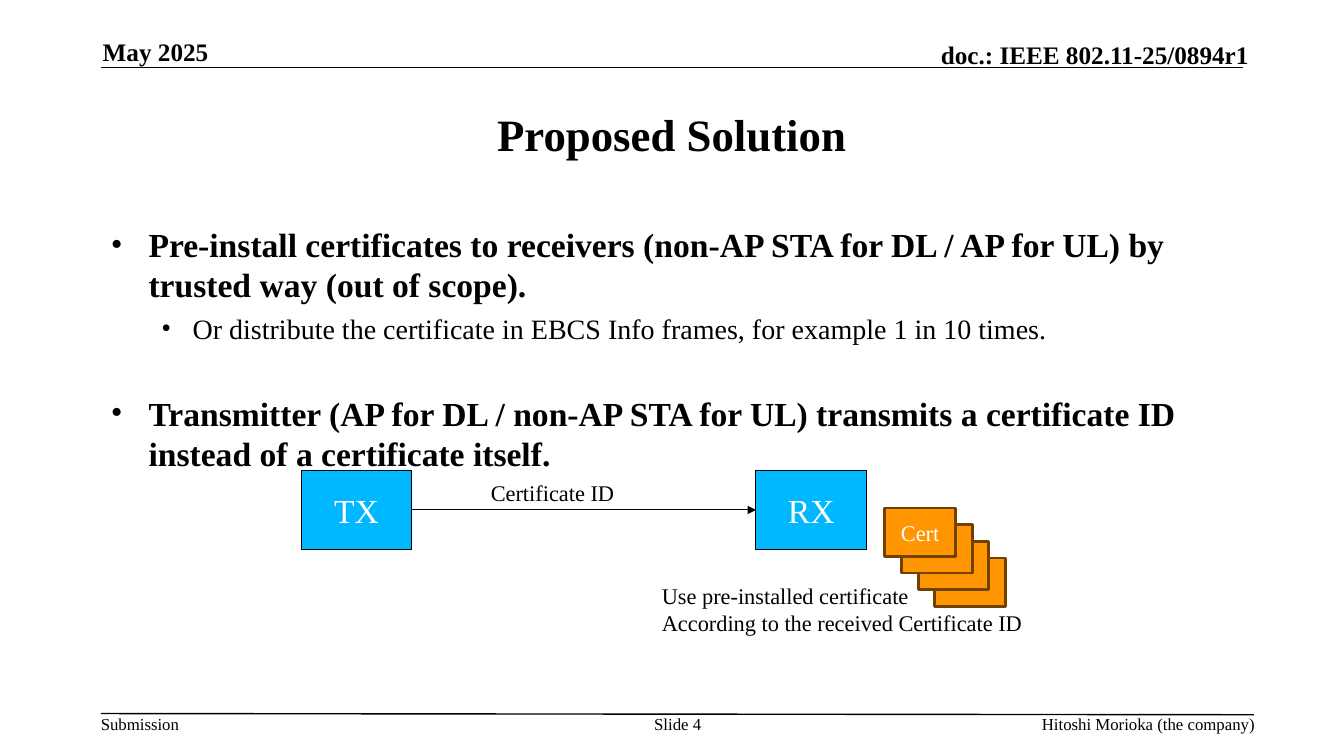
import pptx
import pptx.util
import pptx.dml.color
import pptx.enum.shapes
import pptx.enum.text
import pptx.oxml
import pptx.oxml.ns

Cm, Pt = pptx.util.Cm, pptx.util.Pt
ALIGN = pptx.enum.text.PP_ALIGN
ANCHOR = pptx.enum.text.MSO_ANCHOR
AUTO = pptx.enum.text.MSO_AUTO_SIZE
RECT = pptx.enum.shapes.MSO_SHAPE.RECTANGLE
STRAIGHT = pptx.enum.shapes.MSO_CONNECTOR.STRAIGHT

TITLE = "Proposed Solution"
BULLETS = [
    (0, "Pre-install certificates to receivers (non-AP STA for DL / AP for UL) by trusted way (out of scope).", 0),
    (1, "Or distribute the certificate in EBCS Info frames, for example 1 in 10 times.", 5),
    (0, "Transmitter (AP for DL / non-AP STA for UL) transmits a certificate ID instead of a certificate itself.", 34),
]
LEVELS = [
    {"size": 24, "bold": True, "left": 0.95, "hang": 0.95},
    {"size": 20, "bold": False, "left": 2.06, "hang": 0.79},
]
HEADER = {"size": 18, "bold": True, "anchor": ANCHOR.BOTTOM}
FOOTER = {"size": 12}
MARGINS = [
    ("May 2025", (2.59, 0.91, 6.93, 0.76), ALIGN.LEFT, HEADER),
    ("doc.: IEEE 802.11-25/0894r1", (18.52, 0.99, 12.95, 0.76), ALIGN.RIGHT, HEADER),
    ("Submission", (2.54, 17.98, 2.6, 0.51), ALIGN.LEFT, FOOTER),
    ("Slide 4", (16.1, 17.98, 1.96, 1.02), ALIGN.CENTER, FOOTER),
    ("Hitoshi Morioka (the company)", (19.84, 17.98, 11.79, 0.51), ALIGN.RIGHT, FOOTER),
]
RULES = [(2.54, 1.7, 31.32, 1.7), (2.54, 17.98, 31.6, 18.01)]
STATIONS = [("TX", 7.59), ("RX", 19.05)]
LABELS = [
    (["Certificate ID"], (12.12, 11.94, 3.68, 0.94)),
    (["Use pre-installed certificate", "According to the received Certificate ID"], (16.43, 14.55, 9.73, 1.63)),
]
CERT_COUNT, CERT_LEFT, CERT_TOP, CERT_STEP = 4, 22.3, 12.8, 0.42


def rgb(value):
    return pptx.dml.color.RGBColor.from_string(value)


def write(p, text, size=16, bold=False, color="000000", align=ALIGN.LEFT):
    p.alignment = align
    r = p.add_run()
    r.text = text
    r.font.name = "Times New Roman"
    r.font.size = Pt(size)
    r.font.bold = bold
    r.font.color.rgb = rgb(color)


def add_xml(parent, tag, **attrs):
    el = pptx.oxml.parse_xml(f"<a:{tag} {pptx.oxml.ns.nsdecls('a')}/>")
    for key, value in attrs.items():
        el.set(key, value)
    parent.append(el)


def place(sp, box):
    sp.left, sp.top, sp.width, sp.height = map(Cm, box)


def add_box(s, box, fill, line, width):
    sp = s.shapes.add_shape(RECT, *map(Cm, box))
    sp.shadow.inherit = False
    sp.fill.solid()
    sp.fill.fore_color.rgb = rgb(fill)
    sp.line.color.rgb = rgb(line)
    sp.line.width = Pt(width)
    sp.text_frame.vertical_anchor = ANCHOR.MIDDLE
    return sp


def add_line(s, ends, width):
    c = s.shapes.add_connector(STRAIGHT, *map(Cm, ends))
    c.line.color.rgb = rgb("000000")
    c.line.width = Pt(width)
    add_xml(c._element.spPr, "effectLst")
    return c


def add_margins(s):
    for ends in RULES:
        add_line(s, ends, 1)
    for text, box, align, style in MARGINS:
        tf = s.shapes.add_textbox(*map(Cm, box)).text_frame
        tf.margin_left = tf.margin_right = tf.margin_top = tf.margin_bottom = 0
        tf.word_wrap = True
        tf.vertical_anchor = style.get("anchor", ANCHOR.TOP)
        write(tf.paragraphs[0], text, style["size"], style.get("bold", False), align=align)


def add_content(s):
    title, body = s.shapes.title, s.placeholders[1]
    place(title, (2.54, 1.9, 28.78, 2.95))
    title.text_frame.auto_size = AUTO.NONE
    title.text_frame.vertical_anchor = ANCHOR.MIDDLE
    write(title.text_frame.paragraphs[0], TITLE, 32, True, align=ALIGN.CENTER)

    place(body, (2.54, 5.51, 28.78, 11.43))
    tf = body.text_frame
    tf.auto_size = AUTO.NONE
    for i, (level, text, before) in enumerate(BULLETS):
        p = tf.add_paragraph() if i else tf.paragraphs[0]
        fmt = LEVELS[level]
        p.level = level
        pPr = p._p.get_or_add_pPr()
        pPr.set("marL", str(Cm(fmt["left"])))
        pPr.set("indent", str(-Cm(fmt["hang"])))
        add_xml(pPr, "buFont", typeface="Times New Roman")
        add_xml(pPr, "buChar", char="•")
        p.space_before = Pt(before)
        write(p, text, fmt["size"], fmt["bold"])


def add_diagram(s):
    for i in reversed(range(CERT_COUNT)):
        box = (CERT_LEFT + i * CERT_STEP, CERT_TOP + i * CERT_STEP, 1.78, 1.22)
        cert = add_box(s, box, "FF9500", "704100", 2)
    write(cert.text_frame.paragraphs[0], "Cert", 16, color="FFFFFF", align=ALIGN.CENTER)

    stations = []
    for name, left in STATIONS:
        sp = add_box(s, (left, 11.86, 2.79, 1.98), "00B8FF", "000000", 0.75)
        write(sp.text_frame.paragraphs[0], name, 24, color="FFFFFF", align=ALIGN.CENTER)
        stations.append(sp)
    tx, rx = stations
    arrow = add_line(s, (10.38, 12.85, 19.05, 12.85), 0.75)
    arrow.begin_connect(tx, 3)
    arrow.end_connect(rx, 1)
    add_xml(arrow.line._get_or_add_ln(), "tailEnd", type="triangle")

    for lines, box in LABELS:
        tf = s.shapes.add_textbox(*map(Cm, box)).text_frame
        tf.word_wrap = False
        tf.auto_size = AUTO.SHAPE_TO_FIT_TEXT
        for i, text in enumerate(lines):
            write(tf.add_paragraph() if i else tf.paragraphs[0], text)


def main():
    prs = pptx.Presentation()
    prs.slide_width, prs.slide_height = Cm(33.87), Cm(19.05)
    s = prs.slides.add_slide(prs.slide_layouts[1])
    add_margins(s)
    add_content(s)
    add_diagram(s)
    prs.save("out.pptx")


if __name__ == "__main__":
    main()
